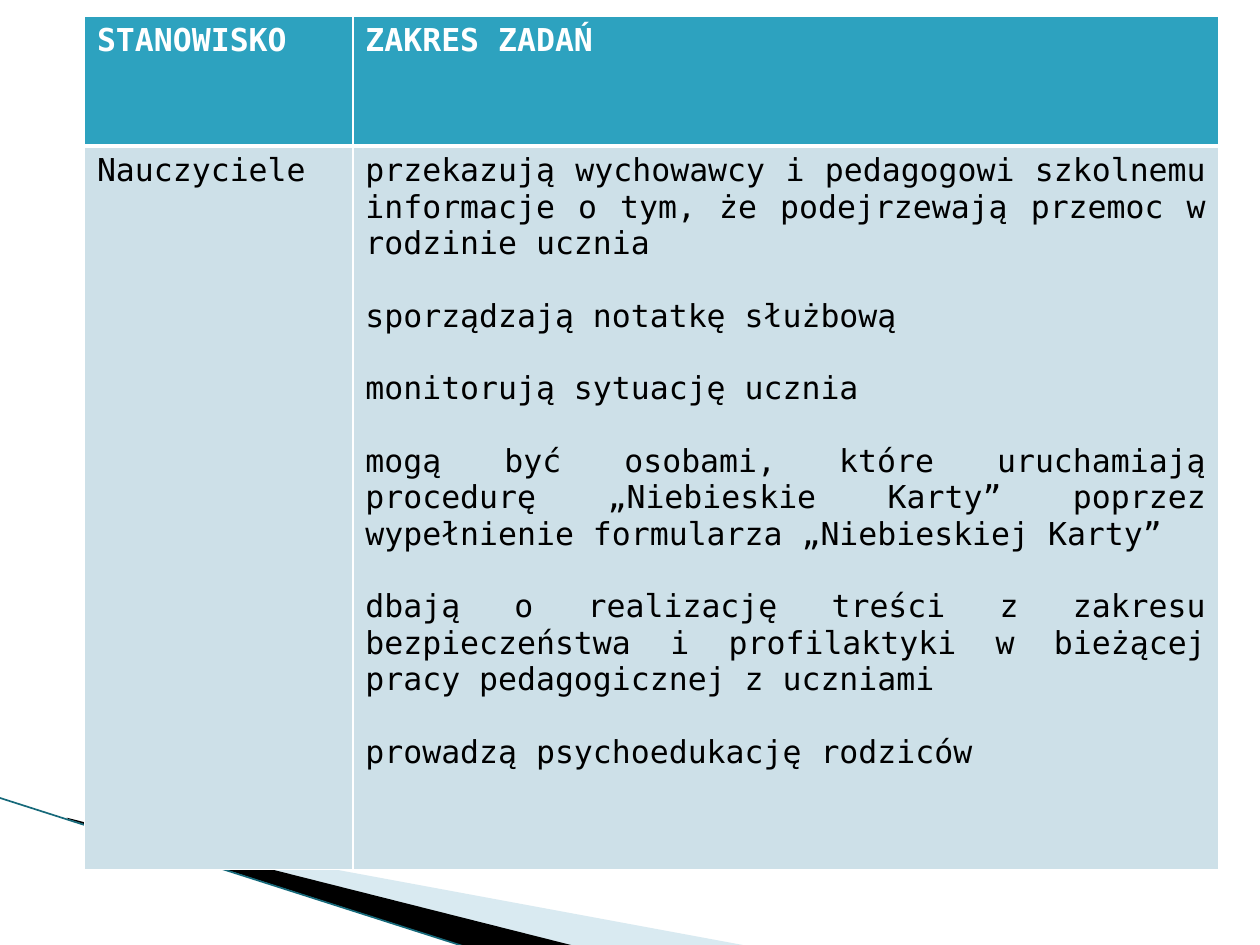
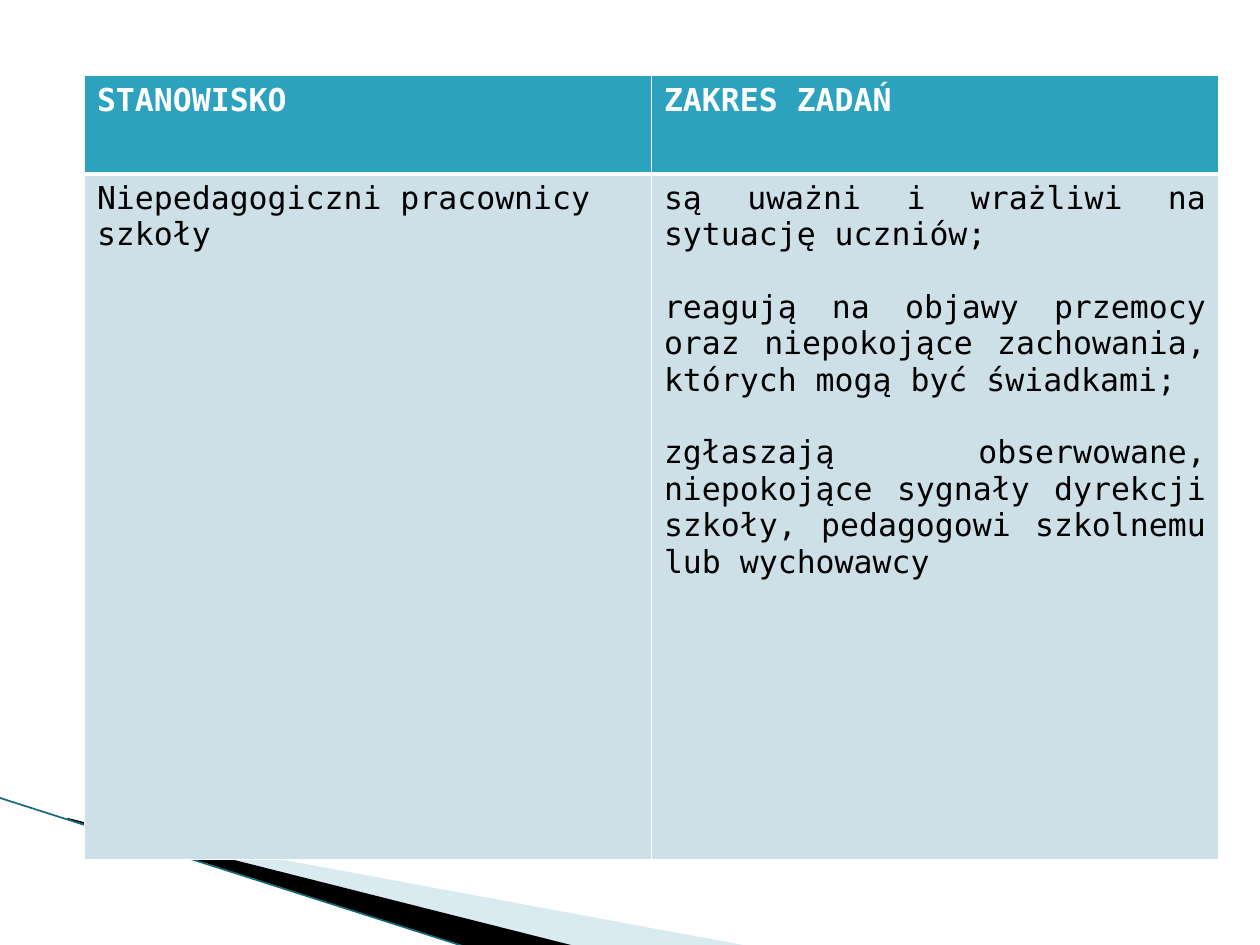
from lxml import etree
from pptx import Presentation
from pptx.dml.color import RGBColor
from pptx.enum.shapes import MSO_CONNECTOR as Conn
from pptx.enum.text import PP_ALIGN as Align
from pptx.oxml import parse_xml
from pptx.oxml.ns import qn, nsdecls
from pptx.util import Pt

PX = 9144
FONT = "DejaVu Sans Mono"
WHITE = RGBColor(0xFF, 0xFF, 0xFF)
BLACK = RGBColor(0x00, 0x00, 0x00)
TEAL = RGBColor(0x2D, 0xA2, 0xBF)
PALE = RGBColor(0xCD, 0xE0, 0xE8)
SKY = RGBColor(0xA0, 0xCB, 0xDC)
DEEP = RGBColor(0x16, 0x69, 0x7A)

HEADS = ["STANOWISKO", "ZAKRES ZADAŃ"]
WEDGES = [
    (SKY, 40, [(55, 651), (595, 751), (456, 751), (55, 650)]),
    (BLACK, 100, [(53, 649), (457, 751), (372, 752), (54, 650)]),
]
PAGES = [
    (13, [213, 687], [103, 574], "Nauczyciele", [
        "przekazują wychowawcy i pedagogowi szkolnemu informacje o tym, że podejrzewają przemoc w rodzinie ucznia",
        "sporządzają notatkę służbową",
        "monitorują sytuację ucznia",
        "mogą być osobami, które uruchamiają procedurę „Niebieskie Karty” poprzez wypełnienie formularza „Niebieskiej Karty”",
        "dbają o realizację treści z zakresu bezpieczeństwa i profilaktyki w bieżącej pracy pedagogicznej z uczniami",
        "prowadzą psychoedukację rodziców",
    ]),
    (60, [450, 450], [78, 544], "Niepedagogiczni pracownicy szkoły", [
        "są uważni i wrażliwi na sytuację uczniów;",
        "reagują na objawy przemocy oraz niepokojące zachowania, których mogą być świadkami;",
        "zgłaszają obserwowane, niepokojące sygnały dyrekcji szkoły, pedagogowi szkolnemu lub wychowawcy",
    ]),
]


def draw_band(slide):
    for tone, alpha, pts in WEDGES:
        pts = [(x * PX, y * PX) for x, y in pts]
        pen = slide.shapes.build_freeform(*pts[0])
        pen.add_line_segments(pts[1:], close=True)
        wedge = pen.convert_to_shape()
        wedge.shadow.inherit = False
        wedge.line.fill.background()
        wedge.fill.solid()
        wedge.fill.fore_color.rgb = tone
        if alpha < 100:
            clr = wedge.fill._xPr.find(".//" + qn("a:srgbClr"))
            etree.SubElement(clr, qn("a:alpha"), val=str(alpha * 1000))
    edge = slide.shapes.add_connector(Conn.STRAIGHT, -PX, 633 * PX, 371 * PX, 752 * PX)
    edge.line.color.rgb = DEEP
    edge.line.width = Pt(0.95)
    etree.SubElement(edge._element.spPr, qn("a:effectLst"))


def style_cell(cell, paras, head):
    cell.fill.solid()
    cell.fill.fore_color.rgb = TEAL if head else PALE
    sides = {"L": 1, "R": 1, "T": 1 if head else 3, "B": 3 if head else 1}
    for i, (side, width) in enumerate(sides.items()):
        cell._tc.get_or_add_tcPr().insert(i, parse_xml(
            f'<a:ln{side} {nsdecls("a")} w="{Pt(width)}"><a:solidFill>'
            f'<a:srgbClr val="{WHITE}"/></a:solidFill></a:ln{side}>'))
    cell.text_frame.text = "\n".join(paras)
    for i, para in enumerate(cell.text_frame.paragraphs):
        if i:
            para.space_before = Pt(20.5)
        for run in para.runs:
            run.font.name = FONT
            run.font.size = Pt(18)
            run.font.bold = head
            run.font.color.rgb = WHITE if head else BLACK


prs = Presentation()
prs.slide_width = 1000 * PX
prs.slide_height = 750 * PX

for top, cols, rows, role, tasks in PAGES:
    slide = prs.slides.add_slide(prs.slide_layouts[6])
    draw_band(slide)
    grid = slide.shapes.add_table(
        2, 2, 67 * PX, top * PX, sum(cols) * PX, sum(rows) * PX).table
    grid.horz_banding = False
    for col, width in zip(grid.columns, cols):
        col.width = width * PX
    for row, height in zip(grid.rows, rows):
        row.height = height * PX
    for cell, head in zip(grid.rows[0].cells, HEADS):
        style_cell(cell, [head], True)
    style_cell(grid.cell(1, 0), [role], False)
    style_cell(grid.cell(1, 1), tasks, False)
    for para in grid.cell(1, 1).text_frame.paragraphs:
        para.alignment = Align.JUSTIFY

prs.save("out.pptx")
